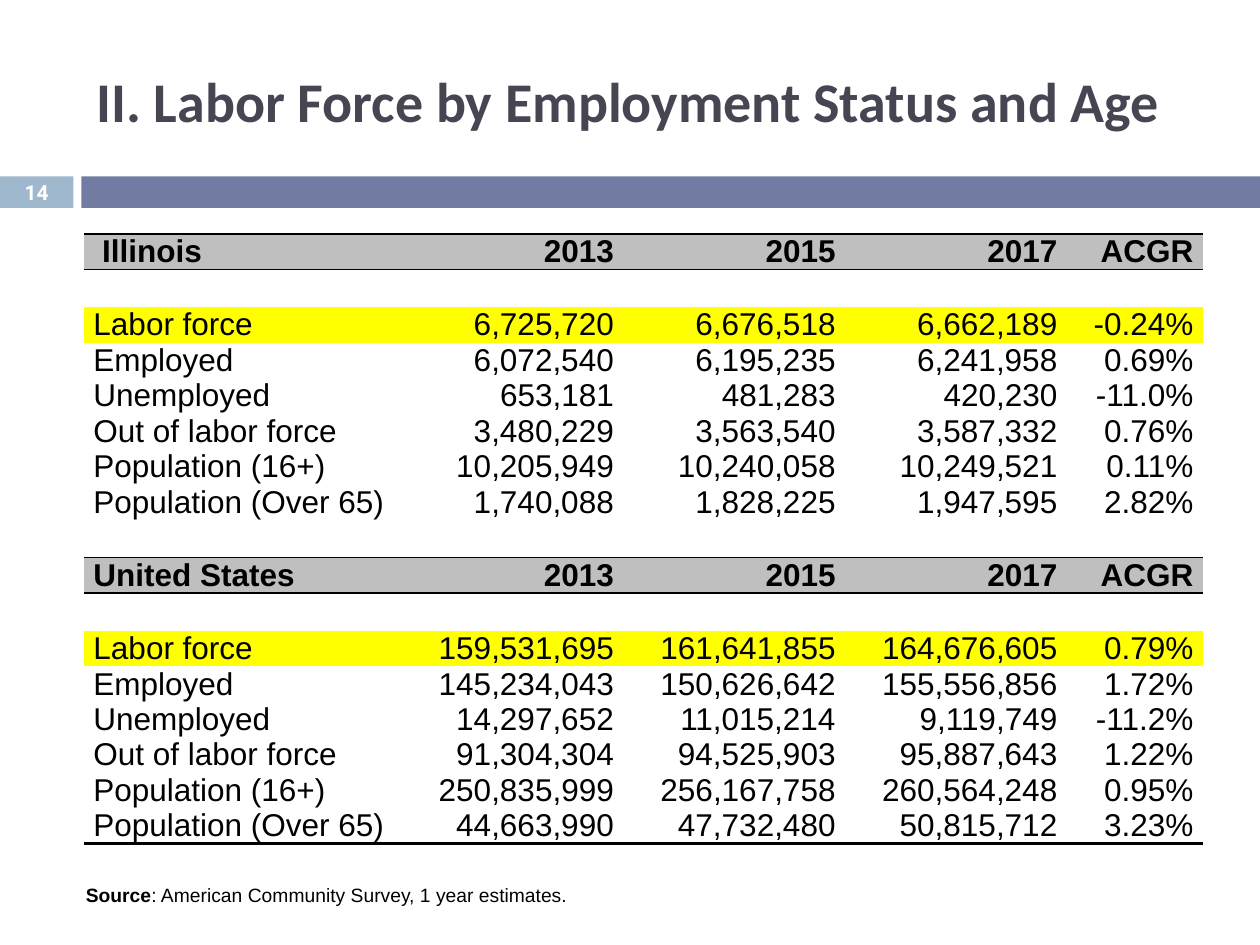
from dataclasses import dataclass

from lxml.etree import SubElement as Sub
from pptx import Presentation
from pptx.dml.color import RGBColor as Rgb
from pptx.enum.shapes import MSO_SHAPE as Shape
from pptx.enum.text import MSO_ANCHOR as Anchor, PP_ALIGN as Align
from pptx.oxml.ns import qn
from pptx.util import Inches, Pt

COLS, ROWS = 100, 75
WIDE, HIGH = Inches(10), Inches(7.5)
HUES = {"pale": "9FB8CD", "band": "727CA3", "title": "464653", "ink": "000000",
        "white": "FFFFFF", "head": "BFBFBF", "mark": "FFFF00"}
PLAIN = "{2D5ABB26-0587-4C30-8999-92F81FD0307C}"
YEARS = ("2013", "2015", "2017", "ACGR")
LABELS = ("Labor force", "Employed", "Unemployed", "Out of labor force",
          "Population (16+)", "Population (Over 65)")
WIDTHS = (25.2, 17.6, 17.6, 17.6, 10.8)
LINE = 2.8


@dataclass
class Box:
    """Left, top, width and height in columns and rows of the slide grid."""
    x: float
    y: float
    w: float
    h: float

    def emu(self) -> tuple:
        return (across(self.x), down(self.y), across(self.w), down(self.h))


@dataclass
class Font:
    size: float
    name: str = "Arial"
    hue: str = "ink"
    bold: bool = False


@dataclass
class Row:
    """A table line: its texts, fill and border widths in points."""
    texts: tuple = ("",) * 5
    fill: str = ""
    bold: bool = False
    top: float = 0
    base: float = 0


@dataclass
class Region:
    name: str
    data: tuple

    def rows(self) -> list:
        body = [Row((label, *nums)) for label, nums in zip(LABELS, self.data)]
        body[0].fill = "mark"
        head = Row((self.name, *YEARS), "head", True, 1, 1)
        return [head, Row(top=1), *body]


REGIONS = (
    Region("\N{NO-BREAK SPACE}Illinois", (
        ("6,725,720", "6,676,518", "6,662,189", "-0.24%"),
        ("6,072,540", "6,195,235", "6,241,958", "0.69%"),
        ("653,181", "481,283", "420,230", "-11.0%"),
        ("3,480,229", "3,563,540", "3,587,332", "0.76%"),
        ("10,205,949", "10,240,058", "10,249,521", "0.11%"),
        ("1,740,088", "1,828,225", "1,947,595", "2.82%"))),
    Region("United States", (
        ("159,531,695", "161,641,855", "164,676,605", "0.79%"),
        ("145,234,043", "150,626,642", "155,556,856", "1.72%"),
        ("14,297,652", "11,015,214", "9,119,749", "-11.2%"),
        ("91,304,304", "94,525,903", "95,887,643", "1.22%"),
        ("250,835,999", "256,167,758", "260,564,248", "0.95%"),
        ("44,663,990", "47,732,480", "50,815,712", "3.23%"))),
)


def across(n: float) -> int:
    return round(WIDE * n / COLS)


def down(n: float) -> int:
    return round(HIGH * n / ROWS)


def assign(item, values: dict) -> None:
    for key, value in values.items():
        setattr(item, key, value)


def write(para, text: str, font: Font) -> None:
    run = para.add_run()
    run.text = text
    assign(run.font, {"size": Pt(font.size), "name": font.name, "bold": font.bold})
    run.font.color.rgb = Rgb.from_string(HUES[font.hue])


def add_bar(slide, box: Box, hue: str) -> None:
    bar = slide.shapes.add_shape(Shape.RECTANGLE, *box.emu())
    bar.shadow.inherit = False
    bar.fill.solid()
    bar.fill.fore_color.rgb = Rgb.from_string(HUES[hue])
    bar.line.fill.background()


def add_title(slide, box: Box, text: str) -> None:
    title = slide.shapes.title
    assign(title, dict(zip(("left", "top", "width", "height"), box.emu())))
    title.text_frame.vertical_anchor = Anchor.MIDDLE
    para = title.text_frame.paragraphs[0]
    para.alignment = Align.LEFT
    props = para._p.get_or_add_pPr()
    props.set("marL", str(across(3.8)))
    props.set("indent", str(across(-3.8)))
    write(para, text, Font(32, "Calibri", "title", True))


def add_text(slide, box: Box, parts: list, frame: dict, align=Align.LEFT) -> None:
    text = slide.shapes.add_textbox(*box.emu()).text_frame
    assign(text, frame)
    para = text.paragraphs[0]
    para.alignment = align
    for words, font in parts:
        write(para, words, font)


def add_edge(cell, tag: str, width: float) -> None:
    """Set one border, or none at zero width; call it before the cell's fill."""
    edge = Sub(cell._tc.get_or_add_tcPr(), qn(tag), w=str(Pt(width)))
    if width:
        Sub(Sub(edge, qn("a:solidFill")), qn("a:srgbClr"), val=HUES["ink"])
    else:
        Sub(edge, qn("a:noFill"))


def fill_cell(cell, text: str, row: Row, first: bool) -> None:
    assign(cell, {"margin_left": across(0.75), "margin_right": across(0.75),
                  "margin_top": 0, "margin_bottom": 0,
                  "vertical_anchor": Anchor.BOTTOM})
    edges = {"a:lnL": 0, "a:lnR": 0, "a:lnT": row.top, "a:lnB": row.base}
    for tag, width in edges.items():
        add_edge(cell, tag, width)
    if row.fill:
        cell.fill.solid()
        cell.fill.fore_color.rgb = Rgb.from_string(HUES[row.fill])
    else:
        cell.fill.background()
    para = cell.text_frame.paragraphs[0]
    assign(para, {"alignment": Align.LEFT if first else Align.RIGHT,
                  "line_spacing": Pt(20.2)})
    if text:
        write(para, text, Font(18, bold=row.bold))
    else:
        Sub(para._p, qn("a:endParaRPr"), sz="1800")


def add_grid(slide, x: float, y: float, rows: list) -> None:
    box = Box(x, y, sum(WIDTHS), LINE * len(rows))
    table = slide.shapes.add_table(len(rows), len(WIDTHS), *box.emu()).table
    assign(table, {"first_row": False, "horz_banding": False})
    table._tbl.tblPr.find(qn("a:tableStyleId")).text = PLAIN
    for col, width in zip(table.columns, WIDTHS):
        col.width = across(width)
    for line, row in zip(table.rows, rows):
        line.height = down(LINE)
        for i, (cell, text) in enumerate(zip(line.cells, row.texts)):
            fill_cell(cell, text, row, i == 0)


def main() -> None:
    deck = Presentation()
    assign(deck, {"slide_width": WIDE, "slide_height": HIGH})
    slide = deck.slides.add_slide(deck.slide_layouts[5])

    add_bar(slide, Box(0, 14, 5.83, 2.5), "pale")
    add_bar(slide, Box(6.46, 14, 93.54, 2.5), "band")
    add_title(slide, Box(6.65, 2.55, 91.7, 10.8),
              "II. Labor Force by Employment Status and Age")
    add_text(slide, Box(0, 13.9, 5.8, 2.7),
             [("14", Font(11.9, "Roboto", "white", True))],
             {"word_wrap": True, "vertical_anchor": Anchor.MIDDLE,
              "margin_top": 0, "margin_bottom": 0}, Align.CENTER)

    state, nation = (region.rows() for region in REGIONS)
    nation[-1].base = 1.5
    add_grid(slide, 6.67, 18.57, [*state, Row(base=1), *nation])
    add_text(slide, Box(5.83, 69.6, 40.6, 2.9),
             [("Source", Font(11, bold=True)),
              (": American Community Survey, 1 year estimates.", Font(11))],
             {"word_wrap": False})
    deck.save("out.pptx")


if __name__ == "__main__":
    main()
